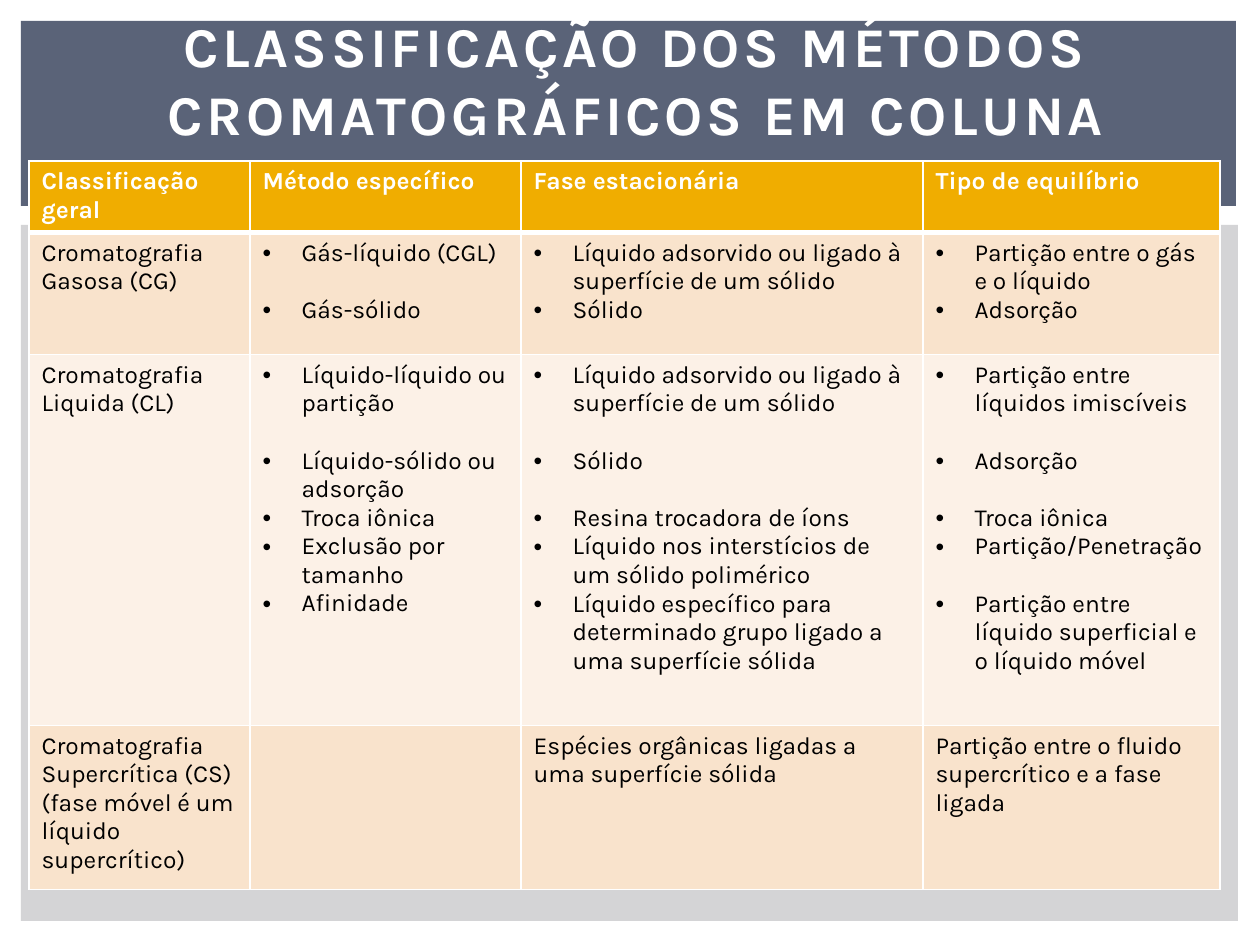
import pptx
import pptx.dml.color
import pptx.enum.shapes
import pptx.enum.text
import pptx.oxml
import pptx.oxml.ns
import pptx.util
from dataclasses import dataclass

EMU_PER_PX = 914400 / 126
ALIGN = pptx.enum.text.PP_ALIGN
ANCHOR = pptx.enum.text.MSO_ANCHOR


@dataclass(frozen=True)
class Theme:
    font: str = "Karla"
    title_size: int = 32
    body_size: int = 14
    line_gap: float = 16.4
    title_spacing: int = 200
    white: str = "FFFFFF"
    ink: str = "000000"
    band: str = "5A6378"
    panel: str = "D4D4D6"
    header: str = "F0AD00"
    rows: tuple = ("F9E3CC", "FCF1E7")


THEME = Theme()

COLUMNS = [221, 271, 402, 297]
ROWS = [70, 122, 371, 164]
INDENT = 39
GAP = "gap"

HEADINGS = ["Classificação geral", "Método específico", "Fase estacionária", "Tipo de equilíbrio"]
METHODS = [
    [
        "Cromatografia Gasosa (CG)",
        ["Gás-líquido (CGL)", GAP, "Gás-sólido"],
        ["Líquido adsorvido ou ligado à superfície de um sólido", "Sólido"],
        ["Partição entre o gás e o líquido", "Adsorção"],
    ],
    [
        "Cromatografia Liquida (CL)",
        ["Líquido-líquido ou partição", GAP, "Líquido-sólido ou adsorção", "Troca iônica",
         "Exclusão por tamanho", "Afinidade"],
        ["Líquido adsorvido ou ligado à superfície de um sólido", GAP, "Sólido", GAP,
         "Resina trocadora de íons", "Líquido nos interstícios de um sólido polimérico",
         "Líquido específico para determinado grupo ligado a uma superfície sólida"],
        ["Partição entre líquidos imiscíveis", GAP, "Adsorção", GAP, "Troca iônica",
         "Partição/Penetração", GAP, "Partição entre líquido superficial e o líquido móvel"],
    ],
    [
        "Cromatografia Supercrítica (CS) (fase móvel é um líquido supercrítico)",
        "",
        "Espécies orgânicas ligadas a uma superfície sólida",
        "Partição entre o fluido supercrítico e a fase ligada",
    ],
]


def px(length):
    return pptx.util.Emu(round(length * EMU_PER_PX))


def rgb(value):
    return pptx.dml.color.RGBColor.from_string(value)


def apply(target, formats):
    for name, value in formats.items():
        setattr(target, name, value)


def paint(part, color):
    part.fill.solid()
    part.fill.fore_color.rgb = rgb(color)


def write(paragraph, text, size, color, bold):
    run = paragraph.add_run()
    run.text = text
    apply(run.font, {"name": THEME.font, "size": pptx.util.Pt(size), "bold": bold})
    run.font.color.rgb = rgb(color)
    return run


def add_panel(slide, box, color):
    panel = slide.shapes.add_shape(
        pptx.enum.shapes.MSO_SHAPE.RECTANGLE, *map(px, box))
    paint(panel, color)
    panel.line.fill.background()
    panel.shadow.inherit = False


def add_title(slide, box, text):
    frame = slide.shapes.add_textbox(*map(px, box)).text_frame
    apply(frame, {"word_wrap": True, "vertical_anchor": ANCHOR.MIDDLE})
    heading = frame.paragraphs[0]
    heading.alignment = ALIGN.CENTER
    run = write(heading, text, THEME.title_size, THEME.white, True)
    run.font._element.set("spc", str(THEME.title_spacing))


def add_borders(cell, bottom_width):
    properties = cell._tc.get_or_add_tcPr()
    for side, width in {"L": 1, "R": 1, "T": 1, "B": bottom_width}.items():
        properties.append(pptx.oxml.parse_xml(
            f'<a:ln{side} {pptx.oxml.ns.nsdecls("a")} w="{pptx.util.Pt(width)}">'
            f'<a:solidFill><a:srgbClr val="{THEME.white}"/></a:solidFill></a:ln{side}>'))


def add_bullet(paragraph):
    properties = paragraph._p.get_or_add_pPr()
    properties.set("marL", str(px(INDENT)))
    properties.set("indent", str(-px(INDENT)))
    properties.append(pptx.oxml.parse_xml(
        f'<a:buFont {pptx.oxml.ns.nsdecls("a")} typeface="Arial"/>'))
    properties.append(pptx.oxml.parse_xml(
        f'<a:buChar {pptx.oxml.ns.nsdecls("a")} char="•"/>'))


def fill_cell(cell, content, color, bold):
    bulleted = isinstance(content, list)
    entries = content if bulleted else [content]
    frame = cell.text_frame
    paragraph = frame.paragraphs[0]
    for index, entry in enumerate(entries):
        if entry in (GAP, ""):
            continue
        if index:
            paragraph = frame.add_paragraph()
            if entries[index - 1] == GAP:
                paragraph.space_before = pptx.util.Pt(THEME.line_gap)
        if bulleted:
            add_bullet(paragraph)
        write(paragraph, entry, THEME.body_size, color, bold)


def add_methods_table(slide, left, top):
    box = (left, top, sum(COLUMNS), sum(ROWS))
    table = slide.shapes.add_table(len(ROWS), len(COLUMNS), *map(px, box)).table
    table.horz_banding = False
    for column, width in zip(table.columns, COLUMNS):
        column.width = px(width)
    for row, height in zip(table.rows, ROWS):
        row.height = px(height)
    for r, contents in enumerate([HEADINGS] + METHODS):
        is_header = r == 0
        for c, content in enumerate(contents):
            cell = table.cell(r, c)
            add_borders(cell, 3 if is_header else 1)
            paint(cell, THEME.header if is_header else THEME.rows[(r - 1) % 2])
            fill_cell(cell, content, THEME.white if is_header else THEME.ink, is_header)


def build_slide(deck):
    slide = deck.slides.add_slide(deck.slide_layouts[6])
    add_panel(slide, (21, 225, 1217, 696), THEME.panel)
    add_panel(slide, (21, 21, 1215, 185), THEME.band)
    add_title(slide, (69, 0, 1134, 158), "CLASSIFICAÇÃO DOS MÉTODOS CROMATOGRÁFICOS EM COLUNA")
    add_methods_table(slide, 29, 161)


def main():
    deck = pptx.Presentation()
    apply(deck, {"slide_width": px(1260), "slide_height": px(945)})
    build_slide(deck)
    deck.save("out.pptx")


if __name__ == "__main__":
    main()
